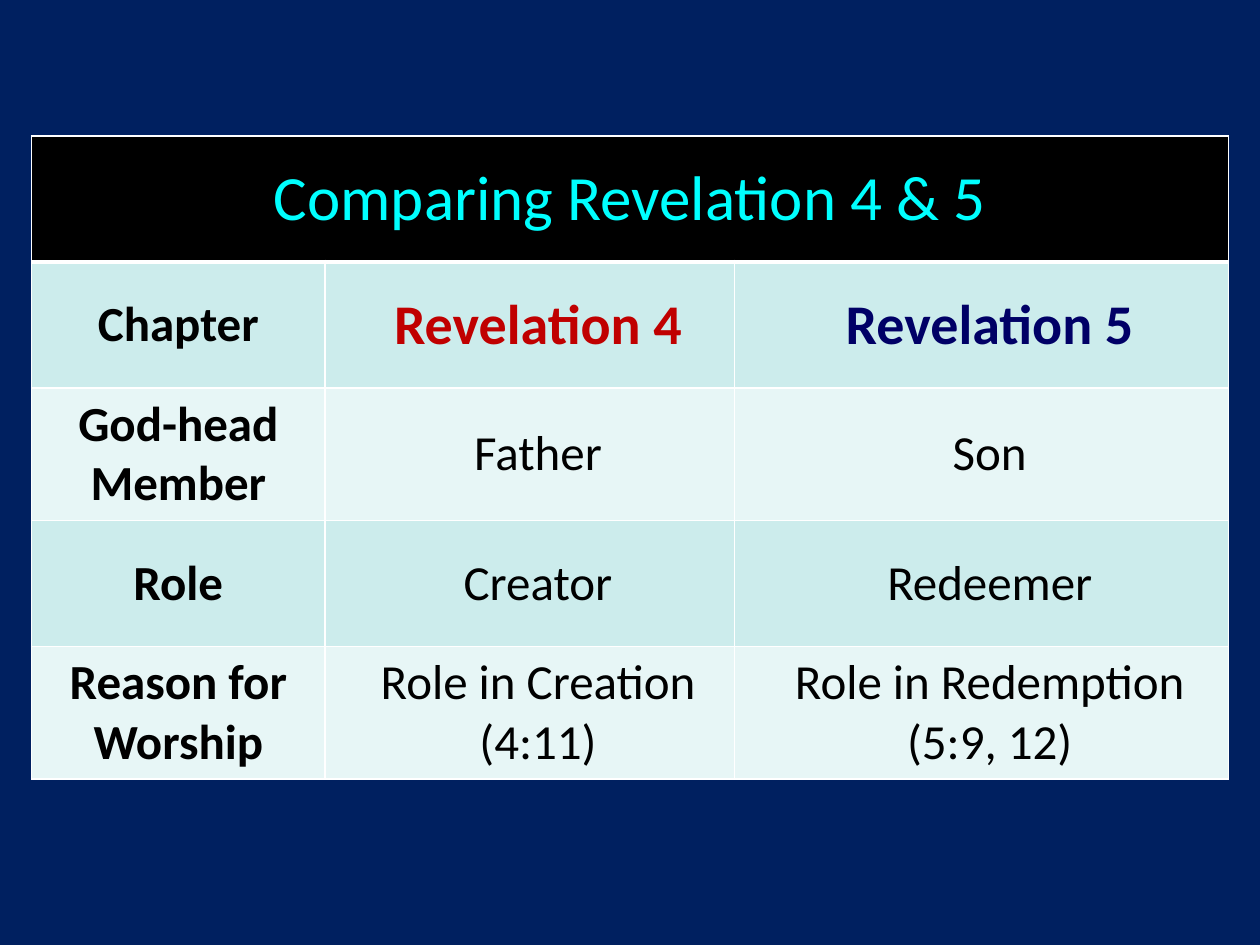
from dataclasses import dataclass

from lxml import etree
from pptx import Presentation
from pptx import util as u
from pptx.dml.color import RGBColor
from pptx.enum import text
from pptx.oxml import ns


@dataclass(frozen=True)
class Theme:
    font: str = "Calibri"
    background: str = "002060"
    border: str = "FFFFFF"
    title_fill: str = "000000"
    bands: tuple = ("CCECEC", "E7F6F6")
    title: str = "00FFFF"
    ink: str = "000000"
    chapters: tuple = ("C00000", "000066")
    title_size: int = 36
    chapter_size: int = 32
    body_size: int = 28


THEME = Theme()
TITLE = "Comparing Revelation 4 & 5"
ROWS = [
    ("Chapter", "Revelation 4", "Revelation 5"),
    ("God-head Member", "Father", "Son"),
    ("Role", "Creator", "Redeemer"),
    ("Reason for Worship", "Role in Creation (4:11)", "Role in Redemption (5:9, 12)"),
]
COL_WIDTHS = (2.33, 3.25, 3.92)
ROW_HEIGHT = 1


def set_fill(fill, color):
    fill.solid()
    fill.fore_color.rgb = RGBColor.from_string(color)


def set_borders(cell, top=1, bottom=1):
    tc_pr = cell._tc.get_or_add_tcPr()
    for side, width in {"L": 1, "R": 1, "T": top, "B": bottom}.items():
        ln = etree.SubElement(tc_pr, ns.qn(f"a:ln{side}"), w=str(u.Pt(width)))
        solid = etree.SubElement(ln, ns.qn("a:solidFill"))
        etree.SubElement(solid, ns.qn("a:srgbClr"), val=THEME.border)


def write_cell(cell, words, fill, color, size, bold=False, indent=0):
    set_fill(cell.fill, fill)
    cell.vertical_anchor = text.MSO_ANCHOR.MIDDLE
    p = cell.text_frame.paragraphs[0]
    p.alignment = text.PP_ALIGN.CENTER
    if indent:
        p._p.get_or_add_pPr().set("marL", str(u.Inches(indent)))
    r = p.add_run()
    r.text = words
    for name, value in {"name": THEME.font, "size": u.Pt(size), "bold": bold}.items():
        setattr(r.font, name, value)
    r.font.color.rgb = RGBColor.from_string(color)


def add_comparison(s):
    count = len(ROWS) + 1
    table = s.shapes.add_table(
        count, len(COL_WIDTHS), u.Inches(0.25), u.Inches(1.08),
        u.Inches(sum(COL_WIDTHS)), u.Inches(count * ROW_HEIGHT)).table
    for column, width in zip(table.columns, COL_WIDTHS):
        column.width = u.Inches(width)
    for row in table.rows:
        row.height = u.Inches(ROW_HEIGHT)

    for col in range(len(COL_WIDTHS)):
        set_borders(table.cell(0, col), bottom=3)
    table.cell(0, 0).merge(table.cell(0, len(COL_WIDTHS) - 1))
    write_cell(table.cell(0, 0), TITLE, THEME.title_fill, THEME.title, THEME.title_size)

    for i, row in enumerate(ROWS):
        for col, words in enumerate(row):
            cell = table.cell(i + 1, col)
            chapter = i == 0 and col > 0
            set_borders(cell, top=3 if i == 0 else 1)
            write_cell(
                cell, words, THEME.bands[i % 2],
                THEME.chapters[col - 1] if chapter else THEME.ink,
                THEME.chapter_size if chapter else THEME.body_size,
                bold=i == 0 or col == 0, indent=0.13 if col else 0)


def main():
    prs = Presentation()
    prs.slide_width, prs.slide_height = u.Inches(10), u.Inches(7.5)
    s = prs.slides.add_slide(prs.slide_layouts[6])
    set_fill(s.background.fill, THEME.background)
    add_comparison(s)
    prs.save("out.pptx")


if __name__ == "__main__":
    main()
